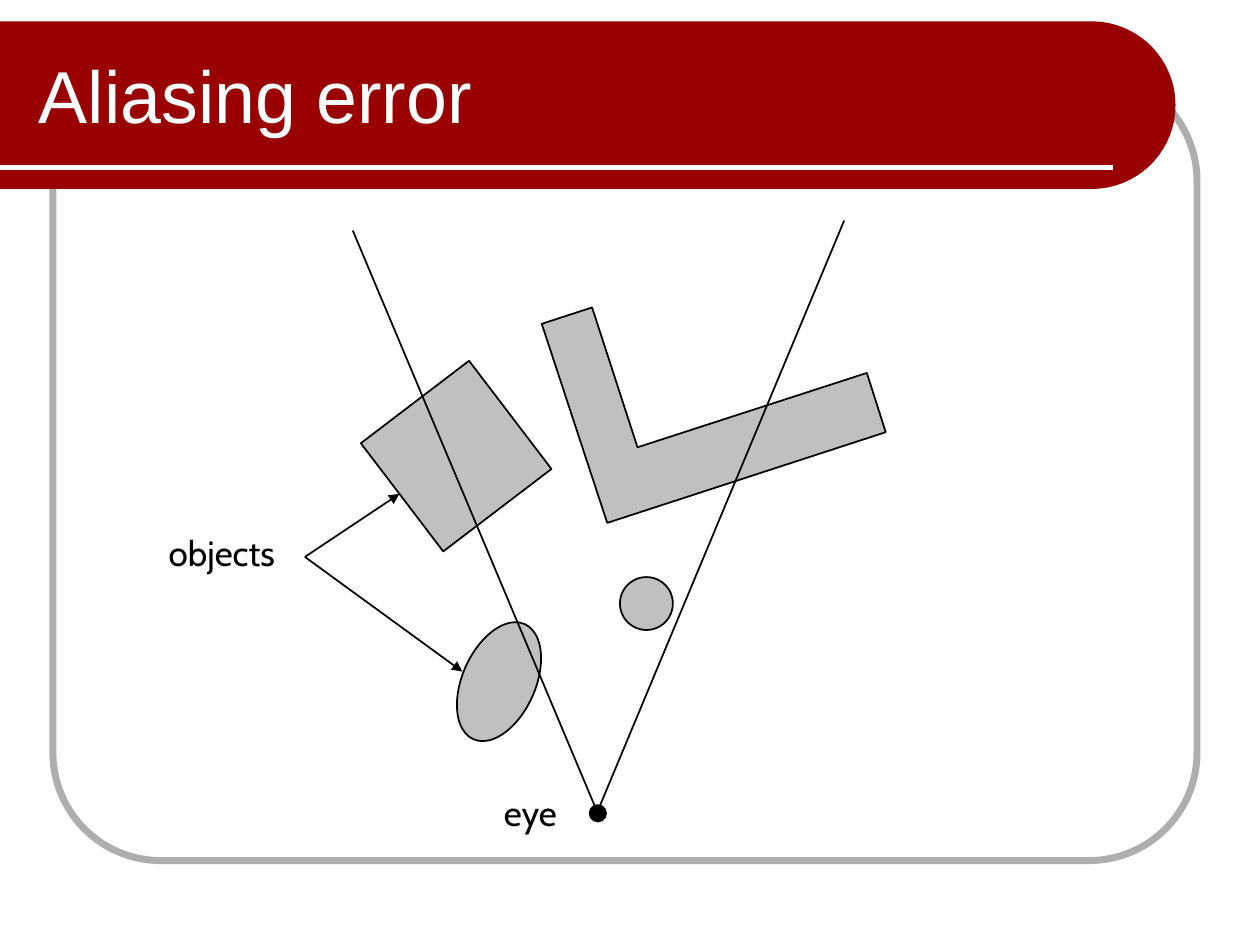
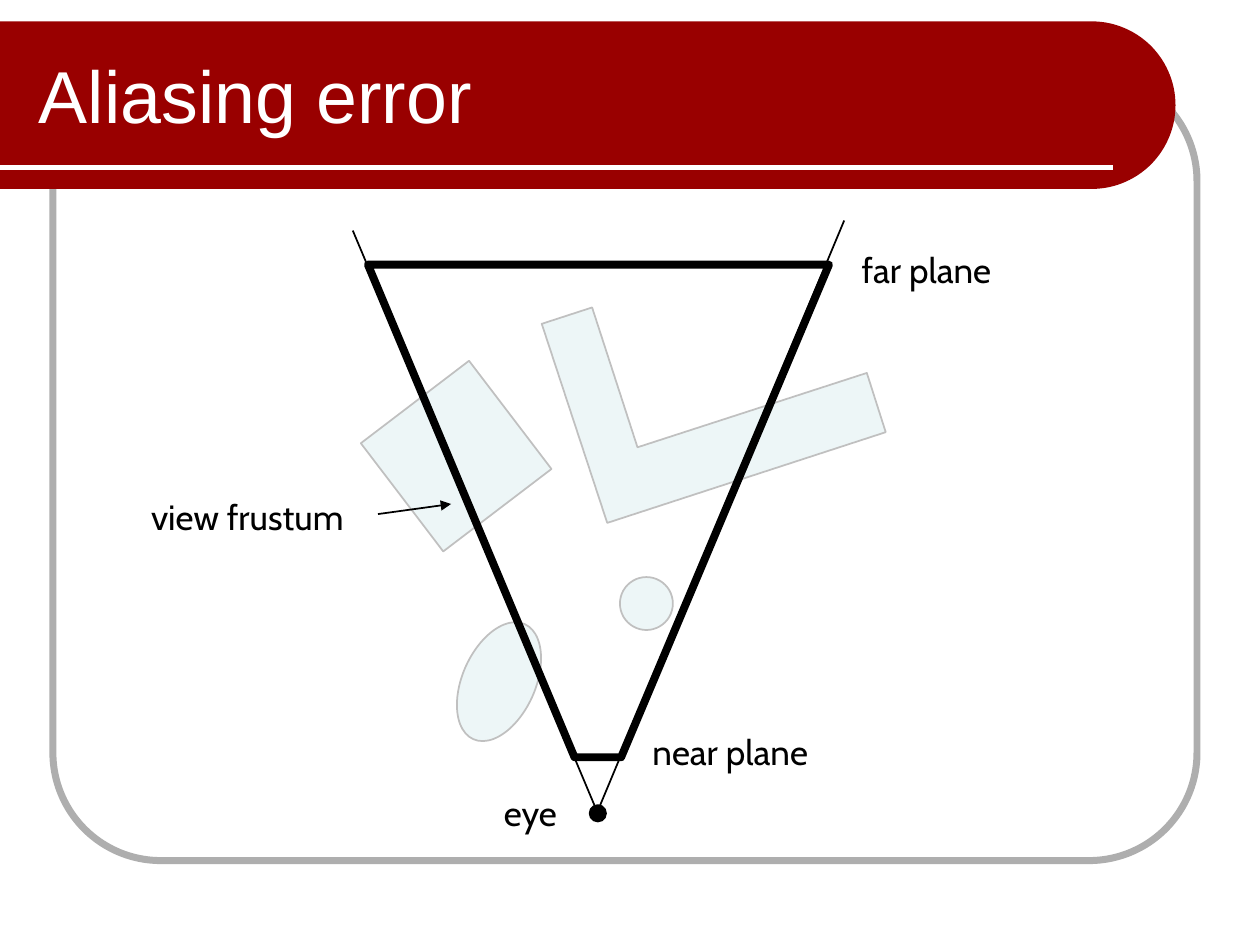
import math
from lxml import etree
from pptx import Presentation, util as u
from pptx.dml.color import RGBColor
from pptx.enum import shapes, text
from pptx.oxml.ns import qn

KIND = shapes.MSO_SHAPE
RED, WHITE, BLACK, FRAME, GRAY, PALE = (
    "990000", "FFFFFF", "000000", "AEAEAE", "C0C0C0", "EDF6F7")

SOLIDS = [
    (KIND.RECTANGLE, (3.08, 3.08, 1.08, 1.08), 52.7),
    (KIND.OVAL, (4.92, 4.58, 0.42, 0.42), 0),
    (KIND.OVAL, (3.46, 5.12, 1, 0.58), 114),
]
ANGLE = [(4.3, 2.57), (4.82, 4.15), (7.03, 3.43), (6.88, 2.96),
         (5.06, 3.55), (4.7, 2.44)]
FRUSTUM = [(4.56, 6.01), (4.93, 6.01), (6.58, 2.1), (2.92, 2.1)]
RAYS = [((2.8, 1.83), (4.73, 6.42)), ((6.7, 1.75), (4.73, 6.47))]
EYE = (4.68, 6.39, 0.13, 0.13)
EYE_TAG = ("eye", (3.9, 6.23, 0.63, 0.43))

SLIDES = [
    dict(title="Aliasing error", fill=GRAY, edge=BLACK, frustum=False,
         tags=[EYE_TAG, ("objects", (1.24, 4.17, 1.07, 0.43))],
         arrows=[((2.42, 4.42), (3.17, 3.92)), ((2.42, 4.42), (3.67, 5.33))]),
    dict(title="Aliasing error", fill=PALE, edge=GRAY, frustum=True,
         tags=[EYE_TAG,
               ("view frustum", (1.1, 3.88, 1.79, 0.43)),
               ("far plane", (6.74, 1.92, 1.29, 0.43)),
               ("near plane", (5.08, 5.75, 1.5, 0.43))],
         arrows=[((3, 4.08), (3.58, 4))]),
]


def inch(vals):
    return [u.Inches(v) for v in vals]


def hue(code):
    return RGBColor.from_string(code)


def paint(shape, fill=None, edge=None, width=1):
    shape.shadow.inherit = False
    if fill:
        shape.fill.solid()
        shape.fill.fore_color.rgb = hue(fill)
    else:
        shape.fill.background()
    if edge:
        shape.line.color.rgb = hue(edge)
        shape.line.width = u.Pt(width)
    else:
        shape.line.fill.background()
    return shape


def solid(slide, kind, box, *style):
    return paint(slide.shapes.add_shape(kind, *inch(box)), *style)


def outline(slide, pts, *style):
    first, *rest = [inch(p) for p in pts]
    path = slide.shapes.build_freeform(*first)
    path.add_line_segments(rest, close=True)
    return paint(path.convert_to_shape(), *style)


def rule(slide, start, end, color=BLACK, width=1, arrow=False):
    line = slide.shapes.add_connector(
        shapes.MSO_CONNECTOR.STRAIGHT, *inch(start + end))
    line.line.color.rgb = hue(color)
    line.line.width = u.Pt(width)
    props = line._element.spPr
    etree.SubElement(props, qn("a:effectLst"))
    if arrow:
        etree.SubElement(props.find(qn("a:ln")), qn("a:tailEnd"), type="triangle")


def label(slide, words, box, size, font, color, wrap=False):
    frame = slide.shapes.add_textbox(*inch(box)).text_frame
    frame.word_wrap = wrap
    frame.vertical_anchor = text.MSO_ANCHOR.MIDDLE if wrap else text.MSO_ANCHOR.TOP
    frame.text = words
    style = frame.paragraphs[0].runs[0].font
    style.size, style.name = u.Pt(size), font
    style.color.rgb = hue(color)


def decor(slide, title):
    frame = solid(slide, KIND.ROUNDED_RECTANGLE, (0.42, 0.58, 9.08, 6.25),
                  None, FRAME, 4)
    frame.adjustments[0] = 0.137
    top, low, tip = 0.17, 1.5, 9.33
    rad = (low - top) / 2
    turns = [math.radians(a) for a in range(-90, 91, 3)]
    arc = [(tip - rad + rad * math.cos(t), top + rad + rad * math.sin(t))
           for t in turns]
    outline(slide, [(0, top), *arc, (0, low)], RED)
    rule(slide, (0, 1.33), (8.83, 1.33), WHITE, 3)
    label(slide, title, (0.21, 0.25, 7.79, 1), 42, "Arial", WHITE, True)


def scene(slide, fill, edge):
    for kind, box, turn in SOLIDS:
        solid(slide, kind, box, fill, edge).rotation = turn
    outline(slide, ANGLE, fill, edge)


def main():
    prs = Presentation()
    prs.slide_width, prs.slide_height = inch((10, 7.5))
    for page in SLIDES:
        slide = prs.slides.add_slide(prs.slide_layouts[6])
        decor(slide, page["title"])
        scene(slide, page["fill"], page["edge"])
        if page["frustum"]:
            shape = outline(slide, FRUSTUM, None, BLACK, 4.5)
            etree.SubElement(shape._element.spPr.find(qn("a:ln")), qn("a:round"))
        solid(slide, KIND.OVAL, EYE, BLACK, BLACK)
        for start, end in RAYS:
            rule(slide, start, end)
        for words, box in page["tags"]:
            label(slide, words, box, 20, "Cabin", BLACK)
        for start, end in page["arrows"]:
            rule(slide, start, end, arrow=True)
    prs.save("out.pptx")


if __name__ == "__main__":
    main()
